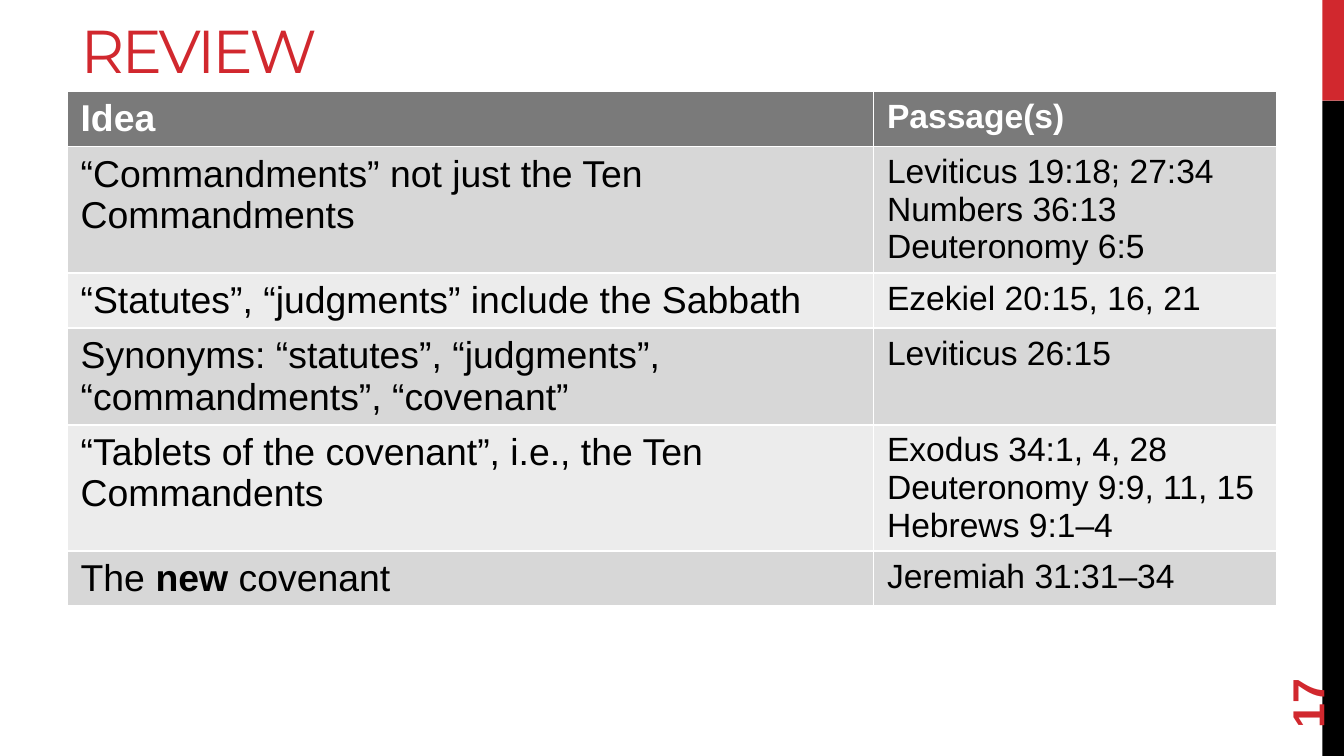
from pptx import Presentation
from pptx.dml.color import RGBColor
from pptx.enum.shapes import MSO_SHAPE
from pptx.enum.text import MSO_ANCHOR, PP_ALIGN
from pptx.util import Inches, Pt

# Content: each idea is a list of (text, bold) runs
TITLE = "REVIEW"
PAGE_NUMBER = "17"
HEADINGS = ("Idea", "Passage(s)")
ROWS = [
    ([("“Commandments” not just the Ten Commandments", False)],
     ["Leviticus 19:18; 27:34", "Numbers 36:13", "Deuteronomy 6:5"]),
    ([("“Statutes”, “judgments” include the Sabbath", False)],
     ["Ezekiel 20:15, 16, 21"]),
    ([("Synonyms: “statutes”, “judgments”, “commandments”, “covenant”", False)],
     ["Leviticus 26:15"]),
    ([("“Tablets of the covenant”, i.e., the Ten Commandents", False)],
     ["Exodus 34:1, 4, 28", "Deuteronomy 9:9, 11, 15", "Hebrews 9:1–4"]),
    ([("The ", False), ("new", True), (" covenant", False)],
     ["Jeremiah 31:31–34"]),
]

COLORS = {"red": "D1282E", "black": "000000", "white": "FFFFFF",
          "header": "7A7A7A", "odd": "D7D7D7", "even": "ECECEC"}
COLUMN_WIDTHS = (6, 3)
COLUMN_SIZES = (20, 18)
ROW_HEIGHT = 0.41
SLIDE_WIDTH, SLIDE_HEIGHT = 10, 5.625
BAR_WIDTH, RED_HEIGHT = 0.16, 0.75


def color(name):
    return RGBColor.from_string(COLORS[name])


def format_run(run, size, color_name, bold=False, font="Arial"):
    run.font.name = font
    run.font.size = Pt(size)
    run.font.bold = bold
    run.font.color.rgb = color(color_name)


def add_bar(slide, top, height, color_name):
    bar = slide.shapes.add_shape(
        MSO_SHAPE.RECTANGLE, Inches(SLIDE_WIDTH - BAR_WIDTH), Inches(top),
        Inches(BAR_WIDTH), Inches(height))
    bar.fill.solid()
    bar.fill.fore_color.rgb = color(color_name)
    bar.line.fill.background()
    bar.shadow.inherit = False


def fill_cell(cell, paragraphs, size, text_color, fill):
    """Write paragraphs, each a list of (text, bold) runs, into a cell."""
    cell.fill.solid()
    cell.fill.fore_color.rgb = color(fill)
    text_frame = cell.text_frame
    for index, runs in enumerate(paragraphs):
        paragraph = text_frame.add_paragraph() if index else text_frame.paragraphs[0]
        for text, bold in runs:
            run = paragraph.add_run()
            run.text = text
            format_run(run, size, text_color, bold)


presentation = Presentation()
presentation.slide_width = Inches(SLIDE_WIDTH)
presentation.slide_height = Inches(SLIDE_HEIGHT)
slide = presentation.slides.add_slide(presentation.slide_layouts[5])

# Right-hand bars
add_bar(slide, 0, RED_HEIGHT, "red")
add_bar(slide, RED_HEIGHT, SLIDE_HEIGHT - RED_HEIGHT, "black")

# Title
title = slide.shapes.title
title.left, title.top = Inches(0.5), Inches(0.07)
title.width, title.height = Inches(9), Inches(0.6)
title.text_frame.text = TITLE
title.text_frame.vertical_anchor = MSO_ANCHOR.MIDDLE
paragraph = title.text_frame.paragraphs[0]
paragraph.alignment = PP_ALIGN.LEFT
format_run(paragraph.runs[0], 32.4, "red", font="Montserrat")
paragraph.runs[0].font._element.set("spc", "-150")

# Table: the default style draws the white cell borders
row_count = len(ROWS) + 1
table = slide.shapes.add_table(
    row_count, len(HEADINGS), Inches(0.5), Inches(0.68),
    Inches(sum(COLUMN_WIDTHS)), Inches(ROW_HEIGHT * row_count)).table
for index, (heading, width, size) in enumerate(
        zip(HEADINGS, COLUMN_WIDTHS, COLUMN_SIZES)):
    table.columns[index].width = Inches(width)
    fill_cell(table.cell(0, index), [[(heading, True)]], size, "white", "header")
for row, (idea, passages) in enumerate(ROWS, start=1):
    fill = "odd" if row % 2 else "even"
    columns = ([idea], [[(passage, False)] for passage in passages])
    for column, paragraphs in enumerate(columns):
        fill_cell(table.cell(row, column), paragraphs, COLUMN_SIZES[column],
                  "black", fill)

# Page number, reading upwards
number = slide.shapes.add_textbox(Inches(9.18), Inches(4.78), Inches(1.08), Inches(0.4))
number.rotation = 270
number.text_frame.word_wrap = True
number.text_frame.vertical_anchor = MSO_ANCHOR.MIDDLE
number.text_frame.text = PAGE_NUMBER
format_run(number.text_frame.paragraphs[0].runs[0], 24, "red", bold=True)

presentation.save("out.pptx")
